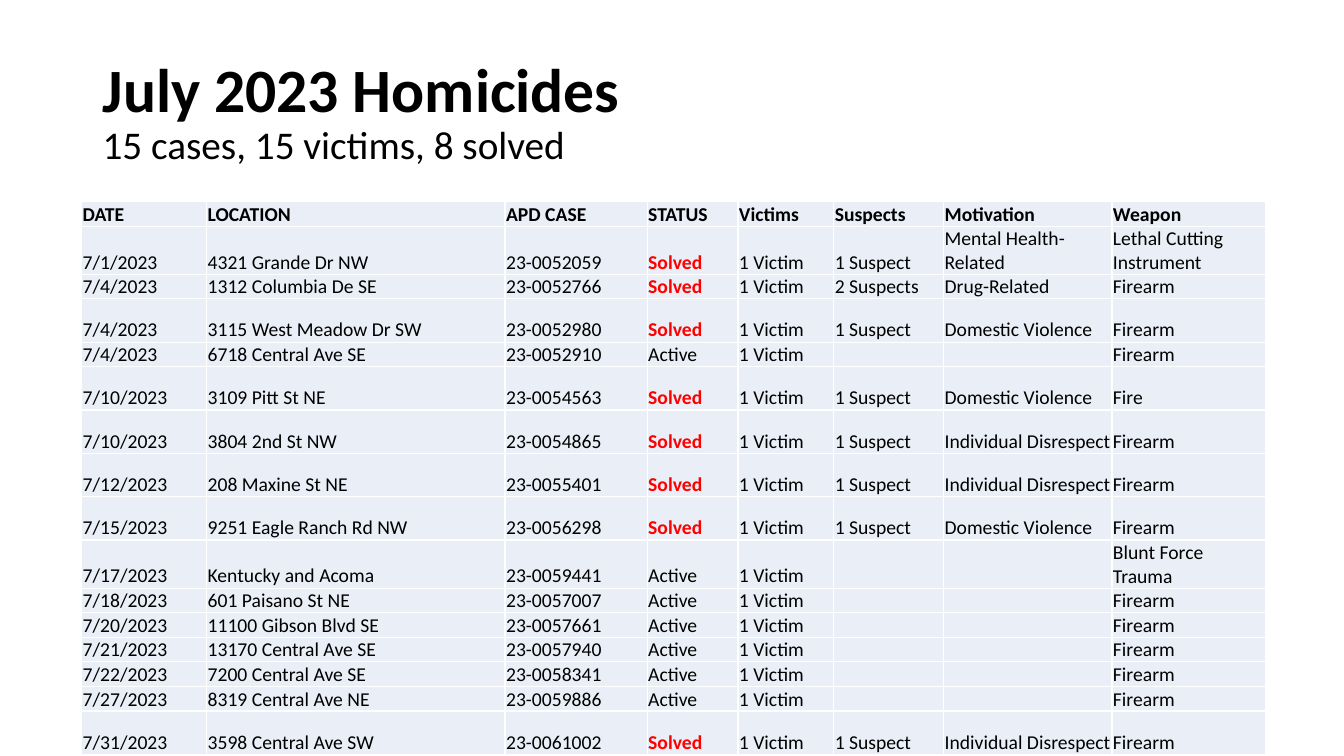
from pptx import Presentation
from pptx.dml.color import RGBColor
from pptx.enum.text import MSO_ANCHOR
from pptx.util import Inches, Pt

BLACK = RGBColor(0x00, 0x00, 0x00)
RED = RGBColor(0xFF, 0x00, 0x00)
PALE_BLUE = RGBColor(0xEA, 0xEF, 0xF7)
BOTTOM = MSO_ANCHOR.BOTTOM
MIDDLE = MSO_ANCHOR.MIDDLE
FONT = "Calibri"

COL_WIDTHS = [1.24, 2.96, 1.41, 0.9, 0.95, 1.09, 1.67, 1.52]
ROW_HEIGHT, TALL_ROW_HEIGHT = 0.21, 0.43
LONGEST_SINGLE_LINE = 12

HEADER = ["DATE", "LOCATION", "APD CASE", "STATUS",
          "Victims", "Suspects", "Motivation", "Weapon"]
CASES = [
    ("7/1/2023", "4321 Grande Dr NW", "23-0052059", "Solved",
     "1 Suspect", "Mental Health-Related", "Lethal Cutting Instrument"),
    ("7/4/2023", "1312 Columbia De SE", "23-0052766", "Solved",
     "2 Suspects", "Drug-Related", "Firearm"),
    ("7/4/2023", "3115 West Meadow Dr SW", "23-0052980", "Solved",
     "1 Suspect", "Domestic Violence", "Firearm"),
    ("7/4/2023", "6718 Central Ave SE", "23-0052910", "Active", "", "", "Firearm"),
    ("7/10/2023", "3109 Pitt St NE", "23-0054563", "Solved",
     "1 Suspect", "Domestic Violence", "Fire"),
    ("7/10/2023", "3804 2nd St NW", "23-0054865", "Solved",
     "1 Suspect", "Individual Disrespect", "Firearm"),
    ("7/12/2023", "208 Maxine St NE", "23-0055401", "Solved",
     "1 Suspect", "Individual Disrespect", "Firearm"),
    ("7/15/2023", "9251 Eagle Ranch Rd NW", "23-0056298", "Solved",
     "1 Suspect", "Domestic Violence", "Firearm"),
    ("7/17/2023", "Kentucky and Acoma", "23-0059441", "Active",
     "", "", "Blunt Force Trauma"),
    ("7/18/2023", "601 Paisano St NE", "23-0057007", "Active", "", "", "Firearm"),
    ("7/20/2023", "11100 Gibson Blvd SE", "23-0057661", "Active", "", "", "Firearm"),
    ("7/21/2023", "13170 Central Ave SE", "23-0057940", "Active", "", "", "Firearm"),
    ("7/22/2023", "7200 Central Ave SE", "23-0058341", "Active", "", "", "Firearm"),
    ("7/27/2023", "8319 Central Ave NE", "23-0059886", "Active", "", "", "Firearm"),
    ("7/31/2023", "3598 Central Ave SW", "23-0061002", "Solved",
     "1 Suspect", "Individual Disrespect", "Firearm"),
]


def set_font(font, size, bold, color=BLACK):
    font.name = FONT
    font.size = Pt(size)
    font.bold = bold
    font.color.rgb = color


def add_title(slide, title, subtitle):
    sp = slide.shapes.add_textbox(Inches(0.92), Inches(0.4), Inches(11.5), Inches(1.45))
    tf = sp.text_frame
    tf.word_wrap = True
    tf.vertical_anchor = MIDDLE
    p = tf.paragraphs[0]
    p.line_spacing = 0.9
    r = p.add_run()
    r.text = title
    set_font(r.font, 44, True)
    p.add_line_break()
    r = p.add_run()
    r.text = subtitle
    set_font(r.font, 28, False)


def fill_cell(cell, text, bold, color):
    cell.fill.solid()
    cell.fill.fore_color.rgb = PALE_BLUE
    cell.vertical_anchor = BOTTOM
    cell.margin_left = cell.margin_right = cell.margin_top = Inches(0.01)
    cell.margin_bottom = 0
    p = cell.text_frame.paragraphs[0]
    if text:
        p.text = text
        set_font(p.font, 14, bold, color)
    else:
        p._p.get_or_add_endParaRPr().set("sz", "1400")


def row_height(row):
    tall = max(len(text) for text in row[-2:]) > LONGEST_SINGLE_LINE
    return TALL_ROW_HEIGHT if tall else ROW_HEIGHT


def add_case_table(slide, rows):
    heights = [row_height(row) for row in rows]
    table = slide.shapes.add_table(
        len(rows), len(COL_WIDTHS), Inches(0.81), Inches(2),
        Inches(sum(COL_WIDTHS)), Inches(sum(heights))).table
    table.first_row = False
    table.horz_banding = False
    for column, width in zip(table.columns, COL_WIDTHS):
        column.width = Inches(width)
    for i, (row, height) in enumerate(zip(rows, heights)):
        table.rows[i].height = Inches(height)
        for j, text in enumerate(row):
            solved = text == "Solved"
            fill_cell(table.cell(i, j), text, i == 0 or solved, RED if solved else BLACK)


def main():
    prs = Presentation()
    prs.slide_width = Inches(13.33)
    prs.slide_height = Inches(7.5)
    slide = prs.slides.add_slide(prs.slide_layouts[6])
    add_title(slide, "July 2023 Homicides", "15 cases, 15 victims, 8 solved")
    add_case_table(slide, [HEADER] + [[*case[:4], "1 Victim", *case[4:]] for case in CASES])
    prs.save("out.pptx")


if __name__ == "__main__":
    main()
